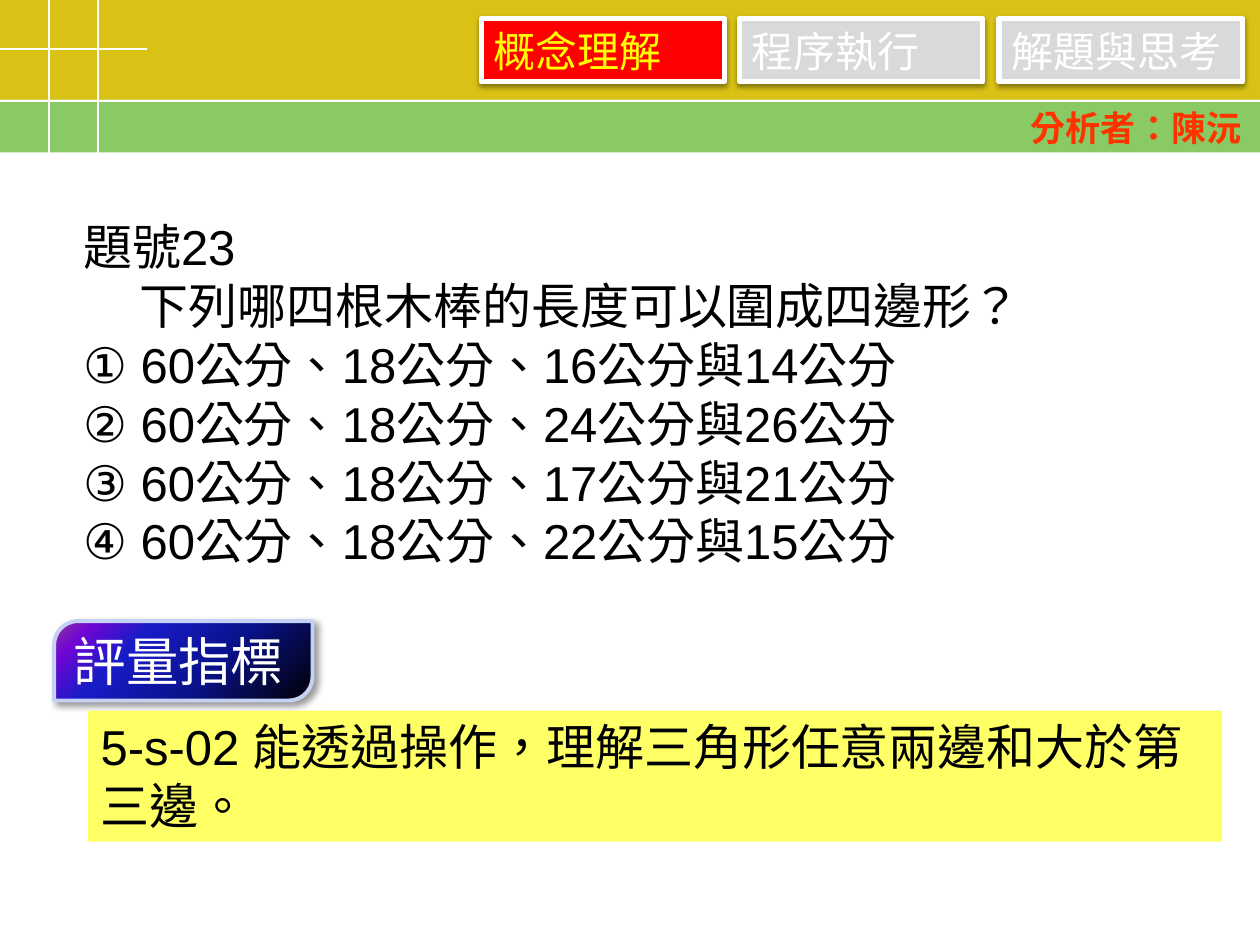
"""Build a maths item-analysis slide with category tabs, the question and its indicator."""
from lxml import etree
from pptx import Presentation
from pptx import util as u
from pptx.dml.color import RGBColor
from pptx.enum import shapes, text
from pptx.oxml.ns import qn

THEME = {
    "font": "Arial", "cjk": "Noto Sans CJK JP",
    "tab_pt": 24, "author_pt": 20, "body_pt": 28, "label_pt": 30,
    "gold": "D9C215", "green": "89CA64", "white": "FFFFFF", "black": "000000",
    "red": "FF0000", "grey": "D9D9D9", "yellow": "FFFF00",
    "author": "FF3300", "note": "FFFF66", "label_line": "C4D0F4",
    "gradient": [(0, "000000"), (40, "0A128C"), (70, "181CC7"), (88, "7005D4"), (100, "8C3D91")],
}
BANDS = [((0, 0.79, 10, 0.42), "green"), ((0, 0, 10, 0.79), "gold")]
RULES = [(0.78, -0.01, 0.78, 1.24), (0, 0.39, 1.17, 0.39),
         (0, 0.8, 10, 0.8), (0.39, -0.02, 0.39, 1.24)]
TABS = [("概念理解", 3.82, "red", "yellow"),
        ("程序執行", 5.87, "grey", "white"),
        ("解題與思考", 7.93, "grey", "white")]
AUTHOR = "分析者：陳沅"
NUMBER = "題號23"
QUESTION = "下列哪四根木棒的長度可以圍成四邊形？"
OPTIONS = ["① 60公分、18公分、16公分與14公分",
           "② 60公分、18公分、24公分與26公分",
           "③ 60公分、18公分、17公分與21公分",
           "④ 60公分、18公分、22公分與15公分"]
LABEL = "評量指標"
INDICATOR = "5-s-02 能透過操作，理解三角形任意兩邊和大於第三邊。"


def rgb(name):
    return RGBColor.from_string(THEME.get(name, name))


def inches(values):
    return [u.Inches(v) for v in values]


def add_run(p, words, size, color, font="font", bold=False):
    r = p.add_run()
    r.text = words
    r.font.size, r.font.bold = u.Pt(THEME[size]), bold
    r.font.name, r.font.color.rgb = THEME[font], rgb(color)
    rPr = r.font._element
    rPr.set("lang", "zh-TW")
    ea = etree.Element(qn("a:ea"), typeface=THEME["cjk"])
    rPr.find(qn("a:latin")).addnext(ea)


def add_box(s, box, fill, line=None, width=0, kind=shapes.MSO_SHAPE.RECTANGLE):
    sp = s.shapes.add_shape(kind, *inches(box))
    sp.shadow.inherit = False
    sp.fill.solid()
    sp.fill.fore_color.rgb = rgb(fill)
    if line:
        sp.line.color.rgb, sp.line.width = rgb(line), u.Pt(width)
    else:
        sp.line.fill.background()
    return sp


def set_frame(sp, align, anchor=text.MSO_ANCHOR.MIDDLE, grow=True):
    tf = sp.text_frame
    tf.word_wrap, tf.vertical_anchor = True, anchor
    tf.auto_size = text.MSO_AUTO_SIZE.SHAPE_TO_FIT_TEXT if grow else text.MSO_AUTO_SIZE.NONE
    tf.paragraphs[0].alignment = align
    return tf


def add_shadow(sp, alpha, blur, dist, angle):
    effects = sp._element.spPr.find(qn("a:effectLst"))
    shadow = etree.SubElement(effects, qn("a:outerShdw"), blurRad=str(u.Pt(blur)),
                              dist=str(u.Pt(dist)), dir=str(angle * 60000), rotWithShape="0")
    color = etree.SubElement(shadow, qn("a:srgbClr"), val=THEME["black"])
    etree.SubElement(color, qn("a:alpha"), val=str(alpha * 1000))


def set_gradient(sp, stops, angle):
    sp.fill.gradient()
    grad = sp._element.spPr.find(qn("a:gradFill"))
    stop_list = grad.find(qn("a:gsLst"))
    for stop in list(stop_list):
        stop_list.remove(stop)
    for pos, color in stops:
        stop = etree.SubElement(stop_list, qn("a:gs"), pos=str(pos * 1000))
        etree.SubElement(stop, qn("a:srgbClr"), val=color)
    grad.find(qn("a:lin")).set("ang", str(angle * 60000))


def add_header(s):
    for box, fill in BANDS:
        add_box(s, box, fill)
    for ends in RULES:
        rule = s.shapes.add_connector(shapes.MSO_CONNECTOR.STRAIGHT, *inches(ends))
        rule.line.color.rgb, rule.line.width = rgb("white"), u.Pt(1)
        etree.SubElement(rule._element.spPr, qn("a:effectLst"))
    for name, left, fill, color in TABS:
        tab = add_box(s, (left, 0.15, 1.93, 0.5), fill, "white", 3)
        add_shadow(tab, 38, 3.1, 1.6, 90)
        tf = set_frame(tab, text.PP_ALIGN.JUSTIFY)
        add_run(tf.paragraphs[0], name, "tab_pt", color, "cjk")
    author = s.shapes.add_textbox(*inches((7.61, 0.8, 2.34, 0.44)))
    tf = set_frame(author, text.PP_ALIGN.RIGHT, text.MSO_ANCHOR.TOP)
    add_run(tf.paragraphs[0], AUTHOR, "author_pt", "author", bold=True)


def add_question(s):
    body = s.placeholders[1]
    body.left, body.top, body.width, body.height = inches((0.56, 1.67, 9.29, 2.93))
    tf = set_frame(body, text.PP_ALIGN.LEFT, text.MSO_ANCHOR.TOP)
    for i, words in enumerate([NUMBER, QUESTION] + OPTIONS):
        p = tf.add_paragraph() if i else tf.paragraphs[0]
        p.alignment, p.space_before = text.PP_ALIGN.LEFT, u.Pt(0)
        pPr = p._p.get_or_add_pPr()
        pPr.set("marL", "0")
        pPr.set("indent", str(u.Inches(0.45 if words == QUESTION else 0)))
        etree.SubElement(pPr, qn("a:buNone"))
        add_run(p, words, "body_pt", "black")


def add_indicator(s):
    label = add_box(s, (0.43, 4.93, 2.05, 0.63), "black", "label_line", 2.25,
                    shapes.MSO_SHAPE.ROUND_2_DIAG_RECTANGLE)
    label.adjustments[0] = 0.3
    set_gradient(label, THEME["gradient"], 225)
    add_shadow(label, 40, 4, 3, 45)
    tf = set_frame(label, text.PP_ALIGN.JUSTIFY, grow=False)
    tf.margin_top = tf.margin_bottom = 0
    add_run(tf.paragraphs[0], LABEL, "label_pt", "white")
    note = add_box(s, (0.7, 5.64, 9, 1.04), "note")
    tf = set_frame(note, text.PP_ALIGN.LEFT, text.MSO_ANCHOR.TOP)
    add_run(tf.paragraphs[0], INDICATOR, "body_pt", "black")


def main():
    prs = Presentation()
    prs.slide_width, prs.slide_height = inches((10, 7.5))
    s = prs.slides.add_slide(prs.slide_layouts[1])
    title = s.shapes.title._element
    title.getparent().remove(title)
    add_header(s)
    add_question(s)
    add_indicator(s)
    prs.save("out.pptx")


if __name__ == "__main__":
    main()
